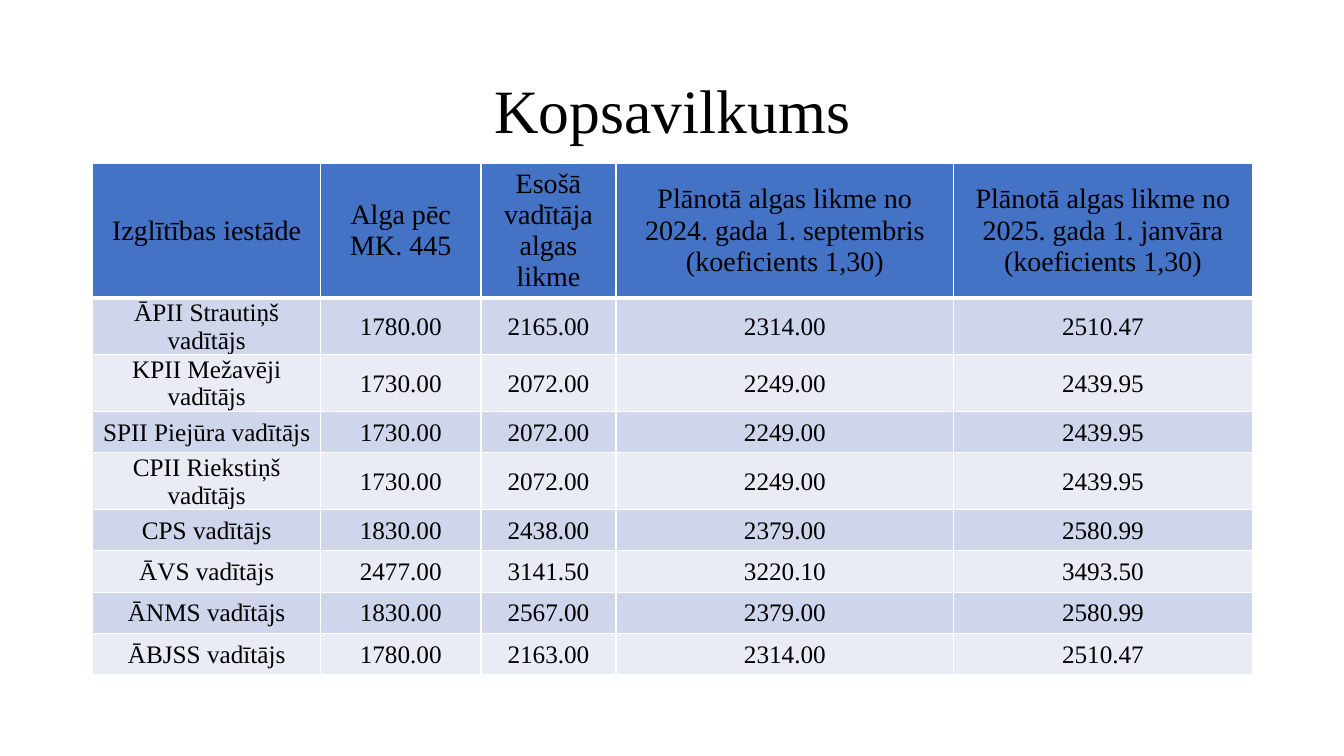
import dataclasses
import pptx
import pptx.dml.color
import pptx.enum.text
import pptx.oxml
import pptx.oxml.ns
import pptx.util

Inches = pptx.util.Inches
Pt = pptx.util.Pt
ALIGN = pptx.enum.text.PP_ALIGN
ANCHOR = pptx.enum.text.MSO_ANCHOR


@dataclasses.dataclass(frozen=True)
class Theme:
    font: str = "Times New Roman"
    ink: str = "000000"
    head: str = "4472C4"
    bands: tuple = ("CFD5EA", "E9EBF5")
    line: str = "FFFFFF"
    title: int = 44
    label: int = 20
    body: int = 18


THEME = Theme()
WIDTHS = (2.26, 1.59, 1.34, 3.35, 2.96)
ROW = 0.41
INSET = 0.01
HEADS = (
    "Izglītības iestāde",
    "Alga pēc MK. 445",
    "Esošā vadītāja algas likme",
    "Plānotā algas likme no 2024. gada 1. septembris (koeficients 1,30)",
    "Plānotā algas likme no 2025. gada 1. janvāra (koeficients 1,30)",
)
RATES = (
    ("ĀPII Strautiņš vadītājs", "1780.00", "2165.00", "2314.00", "2510.47"),
    ("KPII Mežavēji vadītājs", "1730.00", "2072.00", "2249.00", "2439.95"),
    ("SPII Piejūra vadītājs", "1730.00", "2072.00", "2249.00", "2439.95"),
    ("CPII Riekstiņš vadītājs", "1730.00", "2072.00", "2249.00", "2439.95"),
    ("CPS vadītājs", "1830.00", "2438.00", "2379.00", "2580.99"),
    ("ĀVS vadītājs", "2477.00", "3141.50", "3220.10", "3493.50"),
    ("ĀNMS vadītājs", "1830.00", "2567.00", "2379.00", "2580.99"),
    ("ĀBJSS vadītājs", "1780.00", "2163.00", "2314.00", "2510.47"),
)


def write(frame, text, size):
    """Put one centred run into a text frame and return its paragraph."""
    para = frame.paragraphs[0]
    para.alignment = ALIGN.CENTER
    run = para.add_run()
    run.text = text
    font = run.font
    font.name, font.size, font.bold = THEME.font, Pt(size), False
    font.color.rgb = pptx.dml.color.RGBColor.from_string(THEME.ink)
    return para


def edge(cell, top, base):
    """Draw the cell borders; top and base are widths in points."""
    props = cell._tc.get_or_add_tcPr()
    sides = (("lnL", 1), ("lnR", 1), ("lnT", top), ("lnB", base))
    for spot, (side, width) in enumerate(sides):
        props.insert(spot, pptx.oxml.parse_xml(
            f'<a:{side} {pptx.oxml.ns.nsdecls("a")} w="{Pt(width)}">'
            f'<a:solidFill><a:srgbClr val="{THEME.line}"/></a:solidFill>'
            f'</a:{side}>'))


def add_title(slide, box, text):
    title = slide.shapes.title
    title.left, title.top, title.width, title.height = map(Inches, box)
    title.text_frame.vertical_anchor = ANCHOR.MIDDLE
    write(title.text_frame, text, THEME.title).line_spacing = 0.9


def add_rates(slide, box):
    """Build the salary table: a header row and banded body rows."""
    lines = (HEADS,) + RATES
    frame = slide.shapes.add_table(len(lines), len(HEADS), *map(Inches, box))
    table = frame.table
    for col, width in zip(table.columns, WIDTHS):
        col.width = Inches(width)
    for r, line in enumerate(lines):
        table.rows[r].height = Inches(ROW)
        fill = THEME.bands[(r - 1) % 2] if r else THEME.head
        for c, text in enumerate(line):
            cell = table.cell(r, c)
            cell.vertical_anchor = ANCHOR.MIDDLE
            cell.fill.solid()
            cell.fill.fore_color.rgb = pptx.dml.color.RGBColor.from_string(fill)
            if r:
                cell.margin_left = cell.margin_right = Inches(INSET)
                cell.margin_top, cell.margin_bottom = Inches(INSET), 0
            edge(cell, 3 if r == 1 else 1, 1 if r else 3)
            write(cell.text_frame, text, THEME.body if r else THEME.label)
    frame.height = Inches(box[3])


def main():
    deck = pptx.Presentation()
    deck.slide_width, deck.slide_height = Inches(13.33), Inches(7.5)
    slide = deck.slides.add_slide(deck.slide_layouts[5])
    add_title(slide, (0.92, 0.4, 11.5, 1.45), "Kopsavilkums")
    add_rates(slide, (0.92, 1.62, 11.5, 5.29))
    deck.save("out.pptx")


if __name__ == "__main__":
    main()
